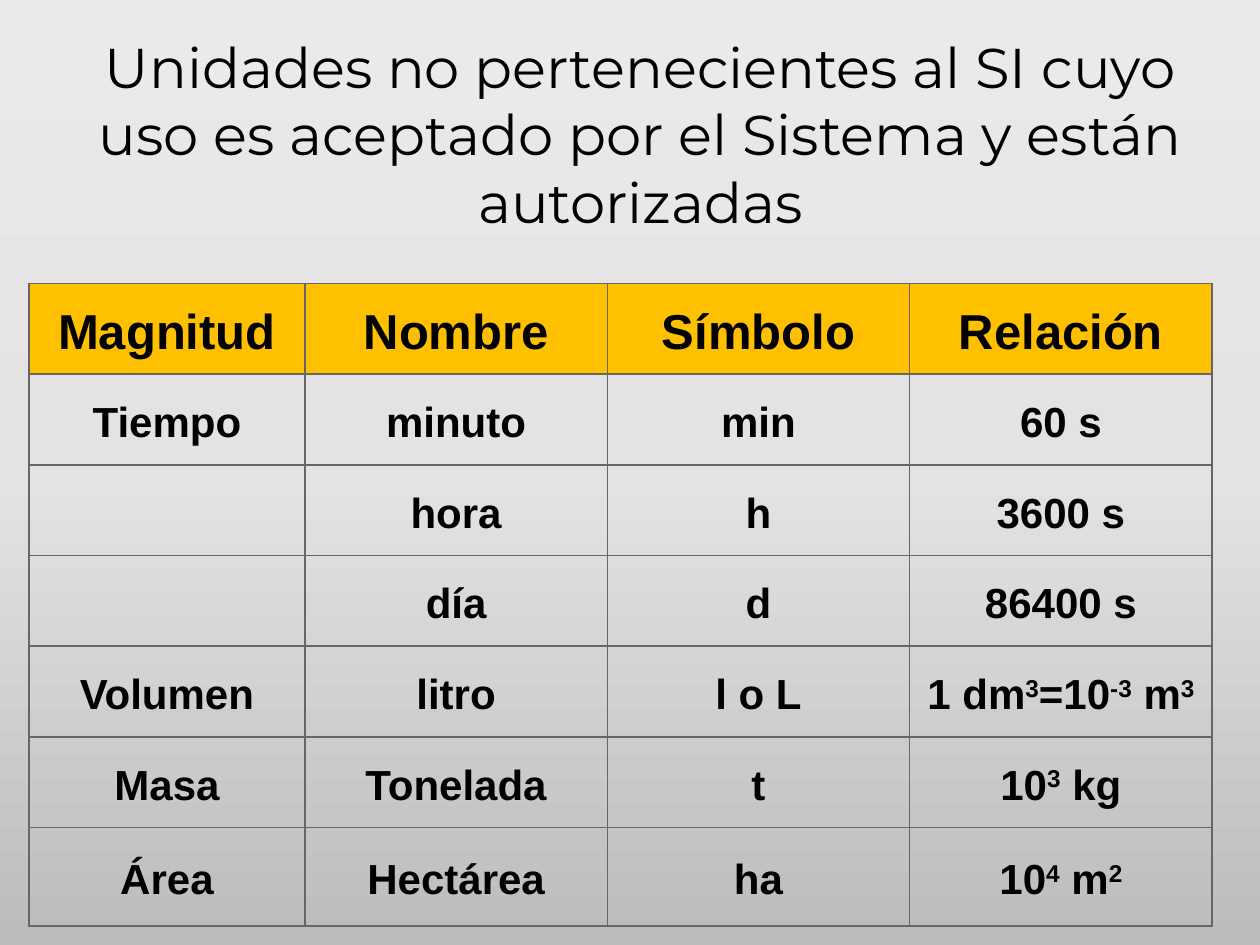
import copy
from dataclasses import dataclass

import lxml.etree
import pptx
import pptx.dml.color
import pptx.enum.text
import pptx.oxml.ns
import pptx.util

Inches = pptx.util.Inches
Pt = pptx.util.Pt
CENTER = pptx.enum.text.PP_ALIGN.CENTER
MIDDLE = pptx.enum.text.MSO_ANCHOR.MIDDLE
INK = "000000"
LINE = "666666"
GOLD = "FFC000"
STOPS = ((0, "EBEAEA"), (0.5, "E4E3E3"), (1, "BDBCBC"))
WIDTHS = (2.19, 2.4, 2.4, 2.4)


@dataclass
class Row:
    cells: tuple
    height: float = 0.72
    size: int = 24
    fill: str = ""


ROWS = (
    Row(("Magnitud", "Nombre", "Símbolo", "Relación"), size=28, fill=GOLD),
    Row(("Tiempo", "minuto", "min", "60 s")),
    Row(("", "hora", "h", "3600 s")),
    Row(("", "día", "d", "86400 s")),
    Row(("Volumen", "litro", "l o L", "1 dm^3^=10^-3^ m^3")),
    Row(("Masa", "Tonelada", "t", "10^3^ kg")),
    Row(("Área", "Hectárea", "ha", "10^4^ m^2"), height=0.78),
)


def color(code: str) -> pptx.dml.color.RGBColor:
    return pptx.dml.color.RGBColor.from_string(code)


def style(font, name: str, size: int, bold: bool) -> None:
    font.name = name
    font.size = Pt(size)
    font.bold = bold
    font.color.rgb = color(INK)


def shade(slide) -> None:
    fill = slide.background.fill
    fill.gradient()
    fill.gradient_angle = 270
    group = slide.element.xpath(".//a:gsLst")[0]
    group.append(copy.deepcopy(group[-1]))
    for stop, (place, code) in zip(fill.gradient_stops, STOPS):
        stop.position = place
        stop.color.rgb = color(code)


def border(cell) -> None:
    qn = pptx.oxml.ns.qn
    props = cell._tc.get_or_add_tcPr()
    for side in ("lnL", "lnR", "lnT", "lnB"):
        line = lxml.etree.SubElement(props, qn(f"a:{side}"), w=str(Pt(1)))
        solid = lxml.etree.SubElement(line, qn("a:solidFill"))
        lxml.etree.SubElement(solid, qn("a:srgbClr"), val=LINE)


def write(cell, text: str, size: int) -> None:
    para = cell.text_frame.paragraphs[0]
    para.alignment = CENTER
    para.line_spacing = 1.15
    para.space_after = Pt(10)
    style(para.font, "Arial", size, True)
    for index, part in enumerate(text.split("^")):
        run = para.add_run()
        run.text = part
        if index % 2:
            run._r.get_or_add_rPr().set("baseline", "30000")


def draw(cell, text: str, row: Row) -> None:
    cell.vertical_anchor = MIDDLE
    cell.margin_left = cell.margin_right = Inches(0.04)
    cell.margin_top = cell.margin_bottom = Inches(0.04)
    border(cell)
    if row.fill:
        cell.fill.solid()
        cell.fill.fore_color.rgb = color(row.fill)
    else:
        cell.fill.background()
    if text:
        write(cell, text, row.size)


def head(slide) -> None:
    title = slide.shapes.title
    title.left, title.top = Inches(0.28), Inches(0.17)
    title.width, title.height = Inches(9.61), Inches(1.78)
    frame = title.text_frame
    frame.word_wrap = True
    frame.vertical_anchor = MIDDLE
    frame.text = "Unidades no pertenecientes al SI cuyo uso es aceptado por el Sistema y están autorizadas"
    para = frame.paragraphs[0]
    para.alignment = CENTER
    style(para.font, "Montserrat", 32, False)


def grid(slide) -> None:
    high = sum(row.height for row in ROWS)
    table = slide.shapes.add_table(
        len(ROWS), len(WIDTHS), Inches(0.23), Inches(2.25),
        Inches(sum(WIDTHS)), Inches(high),
    ).table
    table.first_row = False
    table.horz_banding = False
    for column, width in zip(table.columns, WIDTHS):
        column.width = Inches(width)
    for line, row in zip(table.rows, ROWS):
        line.height = Inches(row.height)
        for cell, text in zip(line.cells, row.cells):
            draw(cell, text, row)


def main() -> None:
    deck = pptx.Presentation()
    deck.slide_width, deck.slide_height = Inches(10), Inches(7.5)
    slide = deck.slides.add_slide(deck.slide_layouts[5])
    shade(slide)
    head(slide)
    grid(slide)
    deck.save("out.pptx")


if __name__ == "__main__":
    main()
